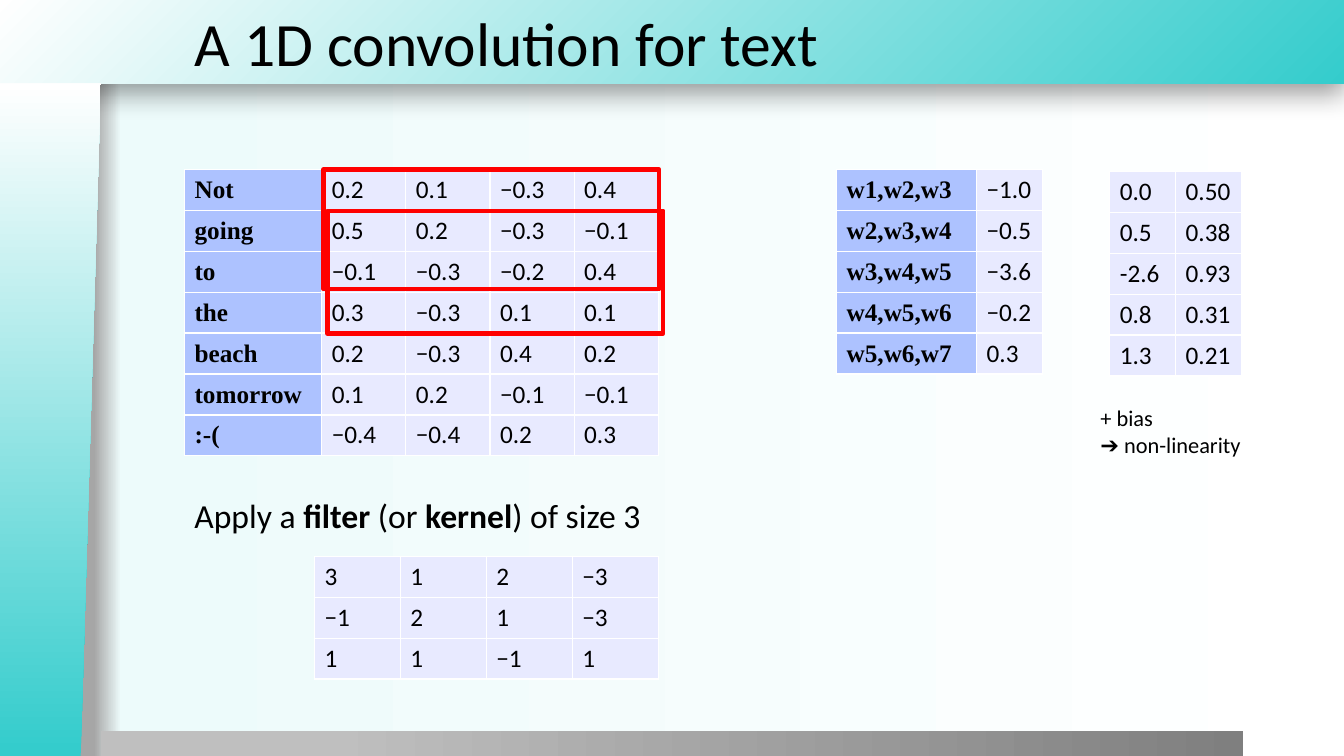
"""Build the slide on a one-dimensional convolution for text."""
from lxml.etree import SubElement
from pptx import Presentation
from pptx.dml.color import RGBColor
from pptx.enum.shapes import MSO_SHAPE
from pptx.enum.text import MSO_ANCHOR, MSO_AUTO_SIZE, PP_ALIGN
from pptx.oxml.ns import qn
from pptx.util import Pt

BLACK = RGBColor(0x00, 0x00, 0x00)
WHITE = RGBColor(0xFF, 0xFF, 0xFF)
RED = RGBColor(0xFF, 0x00, 0x00)
TEAL = RGBColor(0x34, 0xCC, 0xCC)
MINT = RGBColor(0xED, 0xFB, 0xFB)
EDGE_GRAY = RGBColor(0xA6, 0xA6, 0xA6)
LIGHT_GRAY = RGBColor(0xBF, 0xBF, 0xBF)
DARK_GRAY = RGBColor(0x7F, 0x7F, 0x7F)
HEADER_BLUE = RGBColor(0xAD, 0xC2, 0xFF)
CELL_BLUE = RGBColor(0xE8, 0xEA, 0xFF)

BODY_FONT = "Calibri"
WORD_FONT = "Times New Roman"
SYMBOL_FONT = "Cabin"
ROW_HEIGHT = 29.25

TITLE = "A 1D convolution for text"
WORD_VECTORS = [
    ("Not", "0.2", "0.1", "−0.3", "0.4"),
    ("going", "0.5", "0.2", "−0.3", "−0.1"),
    ("to", "−0.1", "−0.3", "−0.2", "0.4"),
    ("the", "0.3", "−0.3", "0.1", "0.1"),
    ("beach", "0.2", "−0.3", "0.4", "0.2"),
    ("tomorrow", "0.1", "0.2", "−0.1", "−0.1"),
    (":-(", "−0.4", "−0.4", "0.2", "0.3"),
]
KERNEL = [("3", "1", "2", "−3"), ("−1", "2", "1", "−3"), ("1", "1", "−1", "1")]
WINDOW_SUMS = [
    ("w1,w2,w3", "−1.0"),
    ("w2,w3,w4", "−0.5"),
    ("w3,w4,w5", "−3.6"),
    ("w4,w5,w6", "−0.2"),
    ("w5,w6,w7", "0.3"),
]
ACTIVATIONS = [("0.0", "0.50"), ("0.5", "0.38"), ("-2.6", "0.93"),
               ("0.8", "0.31"), ("1.3", "0.21")]
TABLES = [
    (WORD_VECTORS, 131.8, 121, [98] + [60.1] * 4, True),
    (KERNEL, 224.6, 397.4, [61.4] * 4, False),
    (WINDOW_SUMS, 597.6, 121, [100, 46.8], True),
    (ACTIVATIONS, 792.7, 122.4, [47, 47], False),
]
WINDOWS = [(234, 150.5, 239.8, 87.8), (231.1, 121, 239.8, 85.7)]
FILTER_LINE = [("Apply a ", BODY_FONT, False), ("filter ", BODY_FONT, True),
               ("(or ", BODY_FONT, False), ("kernel", BODY_FONT, True),
               (") of size 3", BODY_FONT, False)]
BIAS_LINE = [("+ bias", BODY_FONT, False)]
LINEARITY_LINE = [("➔ ", SYMBOL_FONT, False), ("non-linearity", BODY_FONT, False)]


def paint_gradient(element, fill, stops, radial=False):
    """Fill with colour stops, left to right or out from the lower right corner."""
    fill.gradient()
    gradient = element.find(".//" + qn("a:gradFill"))
    for child in list(gradient):
        gradient.remove(child)
    stop_list = SubElement(gradient, qn("a:gsLst"))
    for position, color in stops:
        stop = SubElement(stop_list, qn("a:gs"), pos=str(position * 1000))
        SubElement(stop, qn("a:srgbClr"), val=str(color))
    if radial:
        circle = SubElement(gradient, qn("a:path"), {"path": "circle"})
        SubElement(circle, qn("a:fillToRect"), l="100000", t="100000")
    else:
        SubElement(gradient, qn("a:lin"), ang="0", scaled="0")


def add_panel(page, kind, bounds, stops, radial=False):
    """Add a borderless gradient shape."""
    panel = page.shapes.add_shape(kind, *map(Pt, bounds))
    panel.shadow.inherit = False
    panel.line.fill.background()
    paint_gradient(panel.element, panel.fill, stops, radial)
    return panel


def add_span(para, text, size, font=BODY_FONT, bold=False):
    """Add one formatted run."""
    span = para.add_run()
    span.text = text
    span.font.size = Pt(size)
    span.font.name = font
    span.font.bold = bold
    span.font.color.rgb = BLACK


def add_grid(page, rows, left, top, widths, has_labels):
    """Add a table, with bold labels in its first column if it has them."""
    frame = page.shapes.add_table(len(rows), len(widths), Pt(left), Pt(top),
                                  Pt(sum(widths)), Pt(ROW_HEIGHT * len(rows)))
    table = frame.table
    table.first_row = False
    table.horz_banding = False
    for column, width in zip(table.columns, widths):
        column.width = Pt(width)
    for row, values in zip(table.rows, rows):
        row.height = Pt(ROW_HEIGHT)
        for index, (cell, value) in enumerate(zip(row.cells, values)):
            is_label = has_labels and index == 0
            cell.vertical_anchor = MSO_ANCHOR.MIDDLE
            cell.fill.solid()
            cell.fill.fore_color.rgb = HEADER_BLUE if is_label else CELL_BLUE
            add_span(cell.text_frame.paragraphs[0], value, 18,
                     WORD_FONT if is_label else BODY_FONT, is_label)


def add_note(page, bounds, lines, size, wrap):
    """Add a text box whose lines are lists of runs."""
    frame = page.shapes.add_textbox(*map(Pt, bounds)).text_frame
    frame.word_wrap = wrap
    frame.auto_size = MSO_AUTO_SIZE.SHAPE_TO_FIT_TEXT
    para = frame.paragraphs[0]
    for index, spans in enumerate(lines):
        if index:
            para.add_line_break()
        for text, font, bold in spans:
            add_span(para, text, size, font, bold)


def add_backdrop(page):
    """Paint the background, the title band, the footer bar and the side panel."""
    paint_gradient(page.element, page.background.fill,
                   [(7, EDGE_GRAY), (9, MINT), (100, WHITE)])
    teal_fade = [(0, TEAL), (100, WHITE)]
    band = add_panel(page, MSO_SHAPE.RECTANGLE, (-0.5, 0, 960.5, 59.8), teal_fade, True)
    effects = band.element.spPr.find(qn("a:effectLst"))
    shadow = SubElement(effects, qn("a:outerShdw"), blurRad=str(Pt(20)),
                        dist=str(Pt(6)), dir="5400000", algn="t", rotWithShape="0")
    tint = SubElement(shadow, qn("a:srgbClr"), val=str(BLACK))
    SubElement(tint, qn("a:alpha"), val="40000")
    add_panel(page, MSO_SHAPE.RECTANGLE, (72, 522, 815.8, 18.7),
              [(20, LIGHT_GRAY), (100, DARK_GRAY)])
    side = add_panel(page, MSO_SHAPE.FLOWCHART_MANUAL_INPUT, (-204.5, 264, 481, 72),
                     [(1, TEAL), (100, WHITE)])
    side.rotation = 270
    side.element.spPr.find(qn("a:xfrm")).set("flipV", "1")


def main():
    """Assemble and save the deck."""
    deck = Presentation()
    deck.slide_width, deck.slide_height = Pt(960), Pt(540)
    page = deck.slides.add_slide(deck.slide_layouts[5])
    add_backdrop(page)

    title = page.shapes.title
    title.element.getparent().append(title.element)
    title.left, title.top, title.width, title.height = map(Pt, (131.8, 0, 828.2, 59.8))
    title.text_frame.vertical_anchor = MSO_ANCHOR.MIDDLE
    title.text_frame.auto_size = MSO_AUTO_SIZE.NONE
    para = title.text_frame.paragraphs[0]
    para.alignment = PP_ALIGN.LEFT
    add_span(para, TITLE, 44)

    for grid in TABLES:
        add_grid(page, *grid)
    for bounds in WINDOWS:
        window = page.shapes.add_shape(MSO_SHAPE.RECTANGLE, *map(Pt, bounds))
        window.shadow.inherit = False
        window.fill.background()
        window.line.color.rgb = RED
        window.line.width = Pt(3)
    add_note(page, (131.8, 350, 341.3, 36), [FILTER_LINE], 24, False)
    add_note(page, (779, 285.1, 121.7, 46), [BIAS_LINE, LINEARITY_LINE], 16, True)
    deck.save("out.pptx")


if __name__ == "__main__":
    main()
